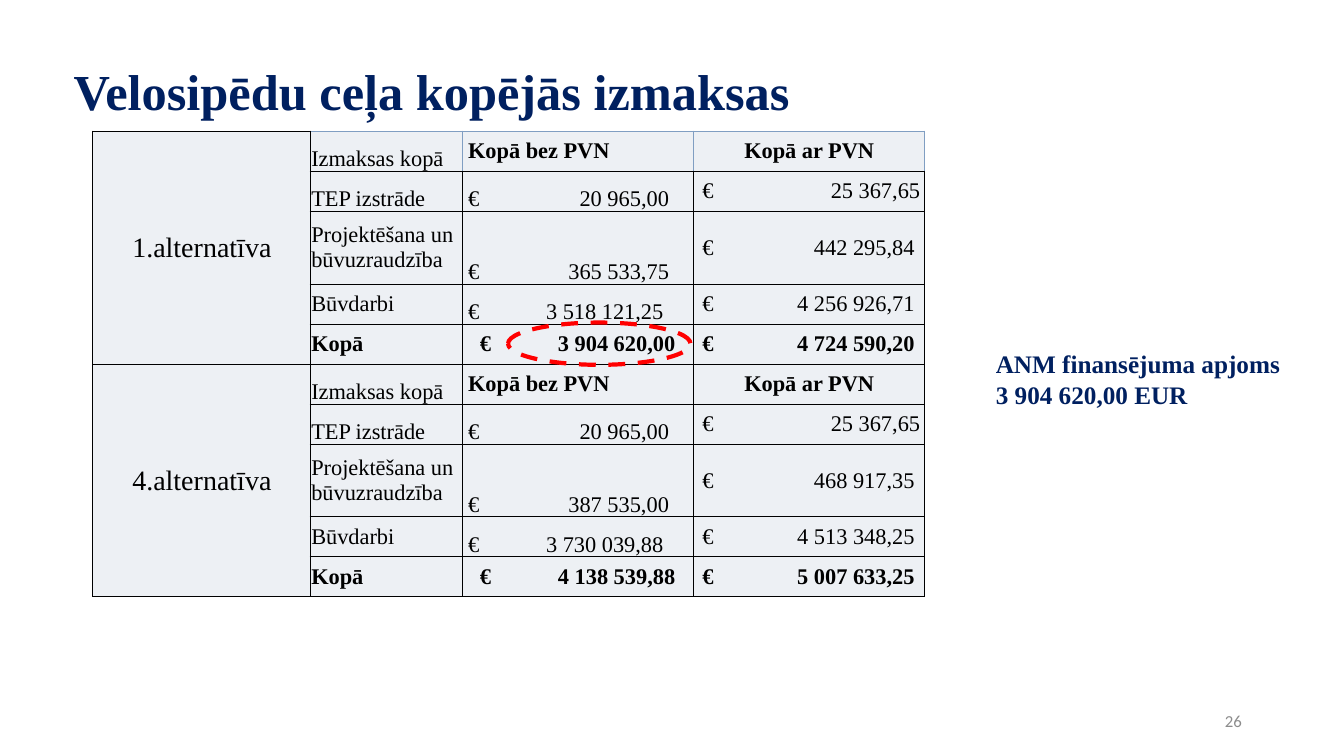
from dataclasses import dataclass

from lxml import etree
from pptx import Presentation
from pptx.dml.color import RGBColor
from pptx.enum.dml import MSO_LINE
from pptx.enum.shapes import MSO_SHAPE
from pptx.enum.text import MSO_ANCHOR, PP_ALIGN
from pptx.oxml.ns import qn
from pptx.slide import Slide
from pptx.table import Table, _Cell
from pptx.text.text import TextFrame, _Paragraph
from pptx.util import Pt

LEFT, CENTER, RIGHT = PP_ALIGN.LEFT, PP_ALIGN.CENTER, PP_ALIGN.RIGHT
TOP, MIDDLE, BOTTOM = MSO_ANCHOR.TOP, MSO_ANCHOR.MIDDLE, MSO_ANCHOR.BOTTOM
DASH, ELLIPSE = MSO_LINE.DASH, MSO_SHAPE.OVAL

NAVY = RGBColor(0x00, 0x20, 0x60)
BLACK = RGBColor(0x00, 0x00, 0x00)
GREY = RGBColor(0x8C, 0x8C, 0x8C)
RED = RGBColor(0xFF, 0x00, 0x00)
CELL_FILL = RGBColor(0xED, 0xF0, 0xF4)
HEADER_EDGE = RGBColor(0x80, 0x9E, 0xC2)

SERIF, SANS = "Times New Roman", "Calibri"
TITLE_ONLY = 5
COLUMN_WIDTHS = (155.5, 108.7, 164.9, 164.9)
ROW_HEIGHTS = (28.6, 28.6, 52, 28.6, 28.6)
EDGES = ("lnL", "lnR", "lnT", "lnB")


@dataclass(frozen=True)
class Style:
    size: float
    color: RGBColor = BLACK
    bold: bool = False
    name: str = SERIF
    align: PP_ALIGN = LEFT


@dataclass(frozen=True)
class CostRow:
    """Layout shared by one cost line in every alternative; stops are from the column edge."""
    label: str
    label_anchor: MSO_ANCHOR
    net_anchor: MSO_ANCHOR
    net_indent: float
    net_stop: float
    gross_stop: float
    bold: bool = False


@dataclass(frozen=True)
class Alternative:
    name: str
    amounts: tuple[tuple[str, str], ...]


COST_ROWS = (
    CostRow("TEP izstrāde", BOTTOM, BOTTOM, 4, 147.5, 162),
    CostRow("Projektēšana un būvuzraudzība", MIDDLE, BOTTOM, 4, 147.5, 158),
    CostRow("Būvdarbi", MIDDLE, BOTTOM, 4, 143.5, 158),
    CostRow("Kopā", MIDDLE, MIDDLE, 12.5, 152, 158, bold=True),
)
ALTERNATIVES = (
    Alternative("1.alternatīva", (
        ("20 965,00", "25 367,65"),
        ("365 533,75", "442 295,84"),
        ("3 518 121,25", "4 256 926,71"),
        ("3 904 620,00", "4 724 590,20"),
    )),
    Alternative("4.alternatīva", (
        ("20 965,00", "25 367,65"),
        ("387 535,00", "468 917,35"),
        ("3 730 039,88", "4 513 348,25"),
        ("4 138 539,88", "5 007 633,25"),
    )),
)

REGULAR = Style(16)
STRONG = Style(16, bold=True)
STRONG_CENTER = Style(16, bold=True, align=CENTER)
ALTERNATIVE_NAME = Style(20, align=CENTER)


def write(frame: TextFrame, text: str, style: Style) -> _Paragraph:
    paragraph = frame.paragraphs[0]
    paragraph.alignment = style.align
    run = paragraph.add_run()
    run.text = text
    formats = {"size": Pt(style.size), "name": style.name, "bold": style.bold}
    for attribute, value in formats.items():
        setattr(run.font, attribute, value)
    run.font.color.rgb = style.color
    return paragraph


def fill_cell(cell: _Cell, text: str, style: Style, anchor: MSO_ANCHOR = MIDDLE,
              indent: float = 0.7) -> _Paragraph:
    formats = {"margin_left": Pt(indent), "vertical_anchor": anchor}
    for attribute, value in formats.items():
        setattr(cell, attribute, value)
    return write(cell.text_frame, text, style)


def fill_amount(cell: _Cell, amount: str, style: Style, anchor: MSO_ANCHOR,
                indent: float, stop: float) -> None:
    """Put the euro sign at the indent and end the amount at a right tab stop."""
    paragraph = fill_cell(cell, f"€\t{amount}", style, anchor, indent)
    tabs = etree.SubElement(paragraph._p.get_or_add_pPr(), qn("a:tabLst"))
    etree.SubElement(tabs, qn("a:tab"), pos=str(Pt(stop - indent)), algn="r")


def set_borders(cell: _Cell, colors: dict[str, RGBColor]) -> None:
    properties = cell._tc.get_or_add_tcPr()
    for position, edge in enumerate(EDGES):
        line = etree.Element(qn(f"a:{edge}"), w=str(Pt(1)))
        solid = etree.SubElement(line, qn("a:solidFill"))
        etree.SubElement(solid, qn("a:srgbClr"), val=str(colors.get(edge, BLACK)))
        properties.insert(position, line)


def format_grid(table: Table) -> None:
    for row in range(len(table.rows)):
        for column in range(len(table.columns)):
            cell = table.cell(row, column)
            for side in ("left", "right", "top", "bottom"):
                setattr(cell, f"margin_{side}", Pt(0))
            cell.fill.solid()
            cell.fill.fore_color.rgb = CELL_FILL
            colors = {}
            if row == 0 and column > 0:
                colors = {"lnT": HEADER_EDGE, "lnR": HEADER_EDGE}
                if column > 1:
                    colors["lnL"] = HEADER_EDGE
            set_borders(cell, colors)


def fill_alternative(table: Table, first_row: int, alternative: Alternative) -> None:
    name = table.cell(first_row, 0)
    name.merge(table.cell(first_row + len(COST_ROWS), 0))
    fill_cell(name, alternative.name, ALTERNATIVE_NAME)
    fill_cell(table.cell(first_row, 1), "Izmaksas kopā", REGULAR, BOTTOM)
    fill_cell(table.cell(first_row, 2), "Kopā bez PVN", STRONG, indent=4)
    fill_cell(table.cell(first_row, 3), "Kopā ar PVN", STRONG_CENTER)
    costs = zip(COST_ROWS, alternative.amounts)
    for row, (cost, (net, gross)) in enumerate(costs, first_row + 1):
        style = STRONG if cost.bold else REGULAR
        fill_cell(table.cell(row, 1), cost.label, style, cost.label_anchor)
        fill_amount(table.cell(row, 2), net, style, cost.net_anchor,
                    cost.net_indent, cost.net_stop)
        fill_amount(table.cell(row, 3), gross, style, MIDDLE, 6.5, cost.gross_stop)


def add_cost_table(slide: Slide) -> None:
    heights = ROW_HEIGHTS * len(ALTERNATIVES)
    table = slide.shapes.add_table(
        len(heights), len(COLUMN_WIDTHS), Pt(66.2), Pt(93.8),
        Pt(sum(COLUMN_WIDTHS)), Pt(sum(heights))).table
    table.first_row = table.horz_banding = False
    for column, width in zip(table.columns, COLUMN_WIDTHS):
        column.width = Pt(width)
    for row, height in zip(table.rows, heights):
        row.height = Pt(height)
    format_grid(table)
    for index, alternative in enumerate(ALTERNATIVES):
        fill_alternative(table, index * len(ROW_HEIGHTS), alternative)


def add_title(slide: Slide) -> None:
    title = slide.shapes.title
    bounds = {"left": 45.4, "top": 39.6, "width": 821.5, "height": 51.1}
    for attribute, value in bounds.items():
        setattr(title, attribute, Pt(value))
    title.text_frame.vertical_anchor = TOP
    write(title.text_frame, "Velosipēdu ceļa kopējās izmaksas", Style(36, NAVY, True))


def add_label(slide: Slide, left: float, top: float, width: float, height: float,
              text: str, style: Style, anchor: MSO_ANCHOR, margin_right: float) -> None:
    frame = slide.shapes.add_textbox(Pt(left), Pt(top), Pt(width), Pt(height)).text_frame
    formats = {"word_wrap": True, "vertical_anchor": anchor, "margin_right": Pt(margin_right)}
    for attribute, value in formats.items():
        setattr(frame, attribute, value)
    write(frame, text, style)


def add_total_highlight(slide: Slide) -> None:
    highlight = slide.shapes.add_shape(ELLIPSE, Pt(362.9), Pt(230.4), Pt(130.3), Pt(30.2))
    highlight.shadow.inherit = False
    highlight.fill.background()
    highlight.line.color.rgb = RED
    highlight.line.width = Pt(3)
    highlight.line.dash_style = DASH


def main() -> None:
    presentation = Presentation()
    presentation.slide_width, presentation.slide_height = Pt(960), Pt(540)
    slide = presentation.slides.add_slide(presentation.slide_layouts[TITLE_ONLY])
    add_title(slide)
    add_cost_table(slide)
    add_label(slide, 678.2, 500.4, 216, 28.8, "26",
              Style(12, GREY, name=SANS, align=RIGHT), MIDDLE, 7.2)
    add_label(slide, 704.2, 245.5, 217.4, 51.1, "ANM finansējuma apjoms 3 904 620,00 EUR",
              Style(18, NAVY, True), TOP, 0)
    add_total_highlight(slide)
    presentation.save("out.pptx")


if __name__ == "__main__":
    main()
